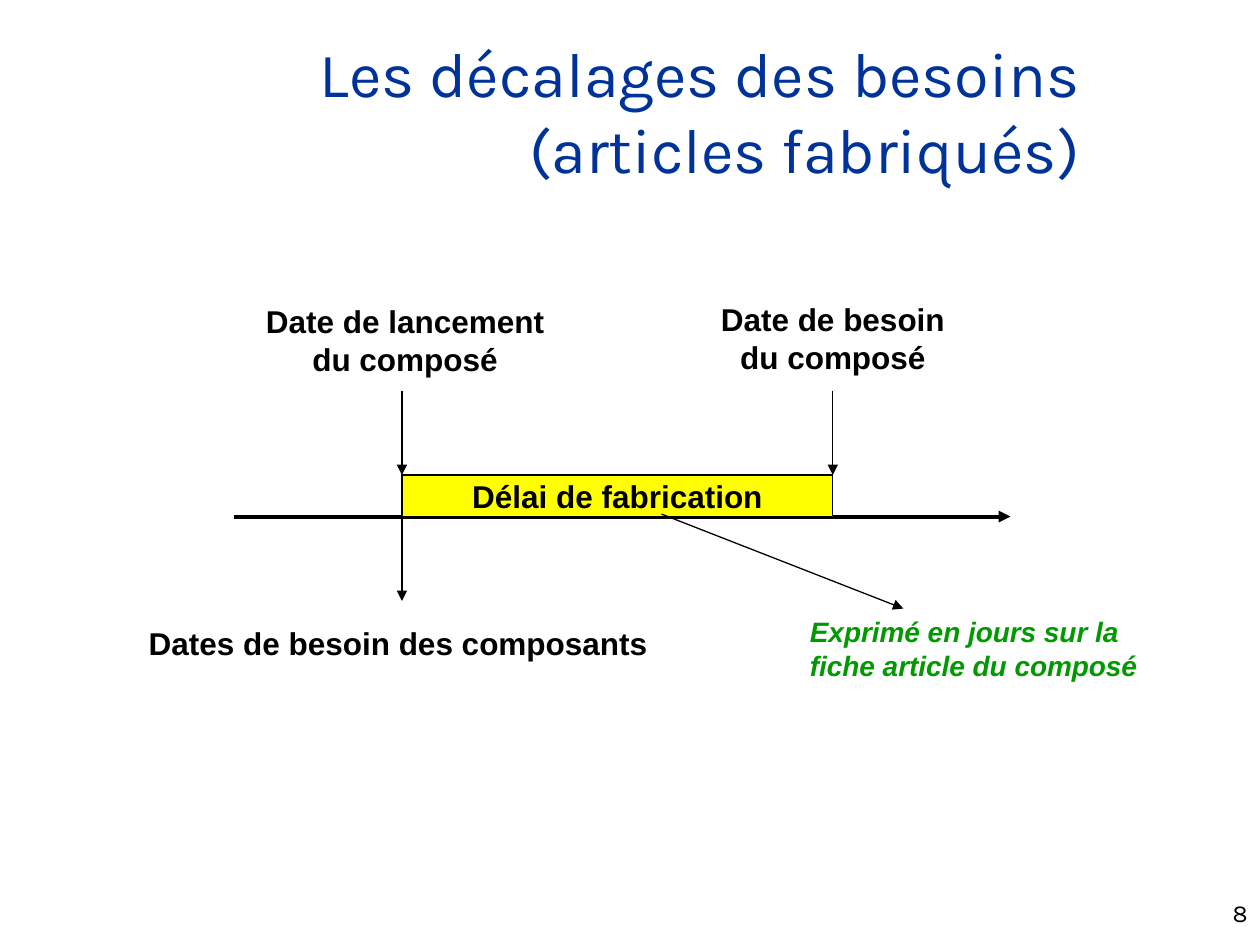
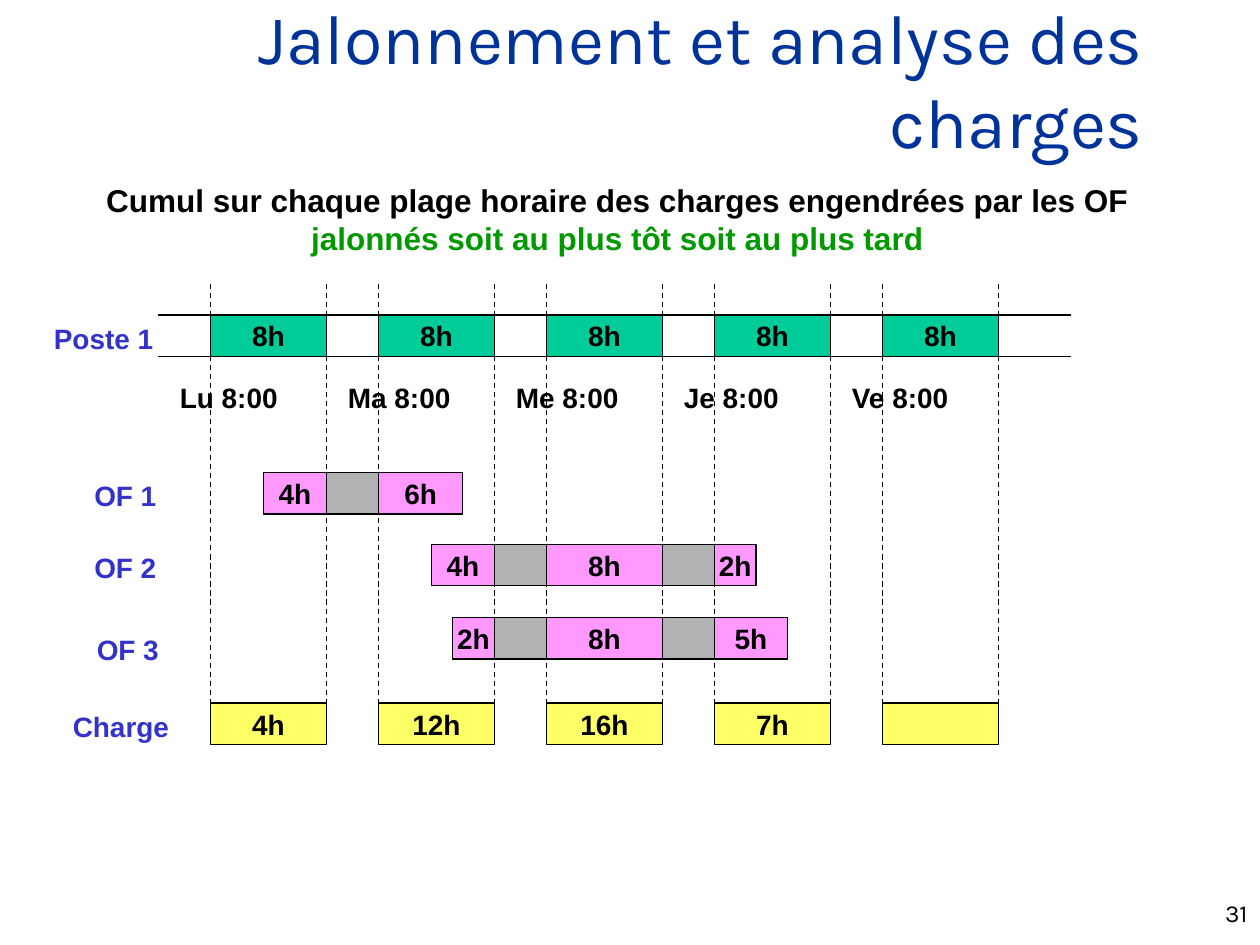
from lxml import etree
from pptx import Presentation
from pptx.dml.color import RGBColor
from pptx.enum.dml import MSO_LINE
from pptx.enum.shapes import MSO_CONNECTOR, MSO_SHAPE
from pptx.enum.text import MSO_ANCHOR, MSO_AUTO_SIZE, PP_ALIGN
from pptx.oxml.ns import qn
from pptx.util import Inches, Pt

LEFT, CENTER, RIGHT = PP_ALIGN.LEFT, PP_ALIGN.CENTER, PP_ALIGN.RIGHT
MIDDLE = MSO_ANCHOR.MIDDLE
DASH = MSO_LINE.DASH
STRAIGHT, RECTANGLE = MSO_CONNECTOR.STRAIGHT, MSO_SHAPE.RECTANGLE

TITLE_FONT, BODY_FONT = "Karla", "Arial"
BLACK = RGBColor(0x00, 0x00, 0x00)
TITLE_BLUE = RGBColor(0x00, 0x33, 0x99)
LABEL_BLUE = RGBColor(0x33, 0x33, 0xCC)
NOTE_GREEN = RGBColor(0x00, 0x99, 0x00)
DELAY_YELLOW = RGBColor(0xFF, 0xFF, 0x00)
STATION_GREEN = RGBColor(0x00, 0xCC, 0x99)
ORDER_PINK = RGBColor(0xFF, 0x99, 0xFF)
NIGHT_GREY = RGBColor(0xB2, 0xB2, 0xB2)
LOAD_YELLOW = RGBColor(0xFF, 0xFF, 0x66)

# Slide 1 content: lead time between launch and need
LEAD_TITLE = "Les décalages des besoins\v(articles fabriqués)"
LAUNCH_X, NEED_X = 3.19, 6.61
BAR_TOP, AXIS_Y = 3.77, 4.1
LEAD_ARROWS = [  # start, end
    ((NEED_X, 3.1), (NEED_X, BAR_TOP)),
    ((LAUNCH_X, 3.1), (LAUNCH_X, BAR_TOP)),
    ((LAUNCH_X, AXIS_Y), (LAUNCH_X, 4.77)),
    ((5.25, 4.08), (7.17, 4.83)),
]
LEAD_LABELS = [
    ((5.62, 2.33, 1.98, 0.7), ["Date de besoin", "du composé"]),
    ((2.01, 2.35, 2.41, 0.7), ["Date de lancement", "du composé"]),
    ((1.08, 4.9, 4.16, 0.4), ["Dates de besoin des composants"]),
]
LEAD_NOTE = "Exprimé en jours sur la fiche article du composé"

# Slide 2 content: orders spread over the days of the week
LOAD_TITLE = "Jalonnement et analyse des charges"
LOAD_SUBTITLE = ["Cumul sur chaque plage horaire des charges engendrées par les OF",
                 "jalonnés soit au plus tôt soit au plus tard"]
DAYS = [("Lu 8:00", "4h"), ("Ma 8:00", "12h"), ("Me 8:00", "16h"),
        ("Je 8:00", "7h"), ("Ve 8:00", "")]  # day, load
ORDERS = [  # name, label position, bar top, first day, hours per day
    ("OF 1", (0.65, 3.75), 3.75, 0, ["4h", "6h"]),
    ("OF 2", (0.65, 4.32), 4.32, 1, ["4h", "8h", "2h"]),
    ("OF 3", (0.67, 4.97), 4.9, 1, ["2h", "8h", "5h"]),
]
FIRST_DAY, DAY_STEP, DAY_WIDTH = 1.67, 4 / 3, 0.92
HOUR_WIDTHS = {"2h": 0.33, "4h": 0.5, "5h": 0.58, "6h": 0.67, "8h": DAY_WIDTH}
STATION_TOP, LOAD_TOP, BAR_HEIGHT = 2.5, 5.58, 0.33


def format_paragraph(paragraph, size, color=BLACK, align=LEFT, font=BODY_FONT,
                     bold=True, italic=False):
    paragraph.alignment = align
    for run in paragraph.runs:
        run.font.name, run.font.size = font, Pt(size)
        run.font.bold, run.font.italic = bold, italic
        run.font.color.rgb = color


def add_text(slide, box, lines, size, color=BLACK, align=LEFT, **style):
    shape = slide.shapes.add_textbox(*map(Inches, box))
    frame = shape.text_frame
    frame.word_wrap = True
    frame.text = "\n".join(lines)
    for paragraph in frame.paragraphs:
        format_paragraph(paragraph, size, color, align, **style)
    return shape


def add_bar(slide, left, top, width, fill, text="", size=16):
    shape = slide.shapes.add_shape(
        RECTANGLE, *map(Inches, (left, top, width, BAR_HEIGHT)))
    shape.shadow.inherit = False
    shape.fill.solid()
    shape.fill.fore_color.rgb = fill
    shape.line.color.rgb = BLACK
    shape.line.width = Pt(0.75)
    if text:
        frame = shape.text_frame
        frame.word_wrap = False
        frame.vertical_anchor = MIDDLE
        frame.text = text
        format_paragraph(frame.paragraphs[0], size, align=CENTER)


def add_line(slide, start, end, width=0.75, dash=None, arrow=False):
    line = slide.shapes.add_connector(STRAIGHT, *map(Inches, start + end))
    line.line.color.rgb = BLACK
    line.line.width = Pt(width)
    if dash:
        line.line.dash_style = dash
    if arrow:
        etree.SubElement(line.line._get_or_add_ln(), qn("a:tailEnd"), type="triangle")
    etree.SubElement(line._element.spPr, qn("a:effectLst"))


def add_slide(presentation, title, box, size, number):
    slide = presentation.slides.add_slide(presentation.slide_layouts[5])
    shape = slide.shapes.title
    shape.left, shape.top, shape.width, shape.height = map(Inches, box)
    frame = shape.text_frame
    frame.text = title
    frame.auto_size = MSO_AUTO_SIZE.NONE
    frame.vertical_anchor = MIDDLE
    format_paragraph(frame.paragraphs[0], size, TITLE_BLUE, RIGHT, TITLE_FONT, False)
    add_text(slide, (7.92, 7.08, 2.08, 0.25), [number], 14, align=RIGHT,
             font=TITLE_FONT, bold=False)
    return slide


def build_lead_time(presentation):
    slide = add_slide(presentation, LEAD_TITLE, (0.17, 0.25, 8.5, 1.25), 36, "8")
    # Time axis behind the delay bar, thin arrows in front of it
    add_line(slide, (1.86, AXIS_Y), (8.02, AXIS_Y), 2.25, arrow=True)
    add_bar(slide, LAUNCH_X, BAR_TOP, NEED_X - LAUNCH_X, DELAY_YELLOW,
            "Délai de fabrication", 18)
    for start, end in LEAD_ARROWS:
        add_line(slide, start, end, arrow=True)
    for box, lines in LEAD_LABELS:
        add_text(slide, box, lines, 18, align=CENTER)
    add_text(slide, (6.33, 4.83, 3.17, 0.64), [LEAD_NOTE], 16, NOTE_GREEN, italic=True)


def build_load_analysis(presentation):
    slide = add_slide(presentation, LOAD_TITLE, (0, 0, 9.17, 1.25), 40, "31")
    subtitle = add_text(slide, (0.4, 1.39, 9, 0.7), LOAD_SUBTITLE, 18, align=CENTER)
    format_paragraph(subtitle.text_frame.paragraphs[1], 18, NOTE_GREEN, CENTER)
    day_starts = [FIRST_DAY + index * DAY_STEP for index in range(len(DAYS))]

    # Workstation hours and day names
    for left, (day, _) in zip(day_starts, DAYS):
        add_bar(slide, left, STATION_TOP, DAY_WIDTH, STATION_GREEN, "8h")
        add_text(slide, (left - 0.34, 2.97, 1.2, 0.37), [day], 16)
    for y in (STATION_TOP, STATION_TOP + BAR_HEIGHT):
        add_line(slide, (1.25, y), (8.5, y))
    add_text(slide, (0.33, 2.5, 1.1, 0.37), ["Poste 1"], 16, LABEL_BLUE)

    # Orders: the first part ends with its day, later parts begin with theirs
    for name, position, top, first_day, parts in ORDERS:
        add_text(slide, position + (0.8, 0.37), [name], 16, LABEL_BLUE)
        for index, hours in enumerate(parts):
            left, width = day_starts[first_day + index], HOUR_WIDTHS[hours]
            if index == 0:
                left += DAY_WIDTH - width
            else:
                night = DAY_STEP - DAY_WIDTH
                add_bar(slide, left - night, top, night, NIGHT_GREY)
            add_bar(slide, left, top, width, ORDER_PINK, hours)

    # Day limits and total load
    for left, (_, load) in zip(day_starts, DAYS):
        for x in (left, left + DAY_WIDTH):
            add_line(slide, (x, 2.25), (x, LOAD_TOP), dash=DASH)
        add_bar(slide, left, LOAD_TOP, DAY_WIDTH, LOAD_YELLOW, load)
    add_text(slide, (0.48, LOAD_TOP, 1.1, 0.37), ["Charge"], 16, LABEL_BLUE)


def main():
    presentation = Presentation()
    presentation.slide_width, presentation.slide_height = Inches(10), Inches(7.5)
    build_lead_time(presentation)
    build_load_analysis(presentation)
    presentation.save("out.pptx")


if __name__ == "__main__":
    main()
